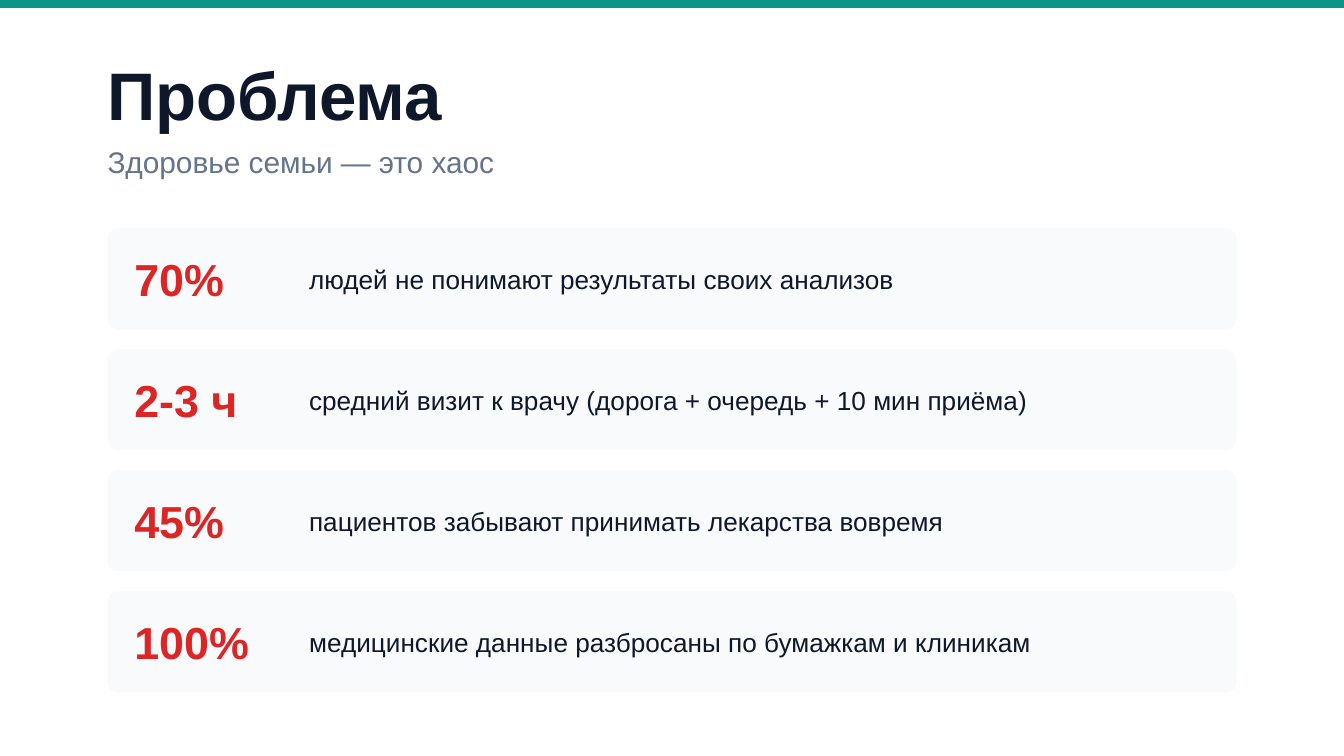
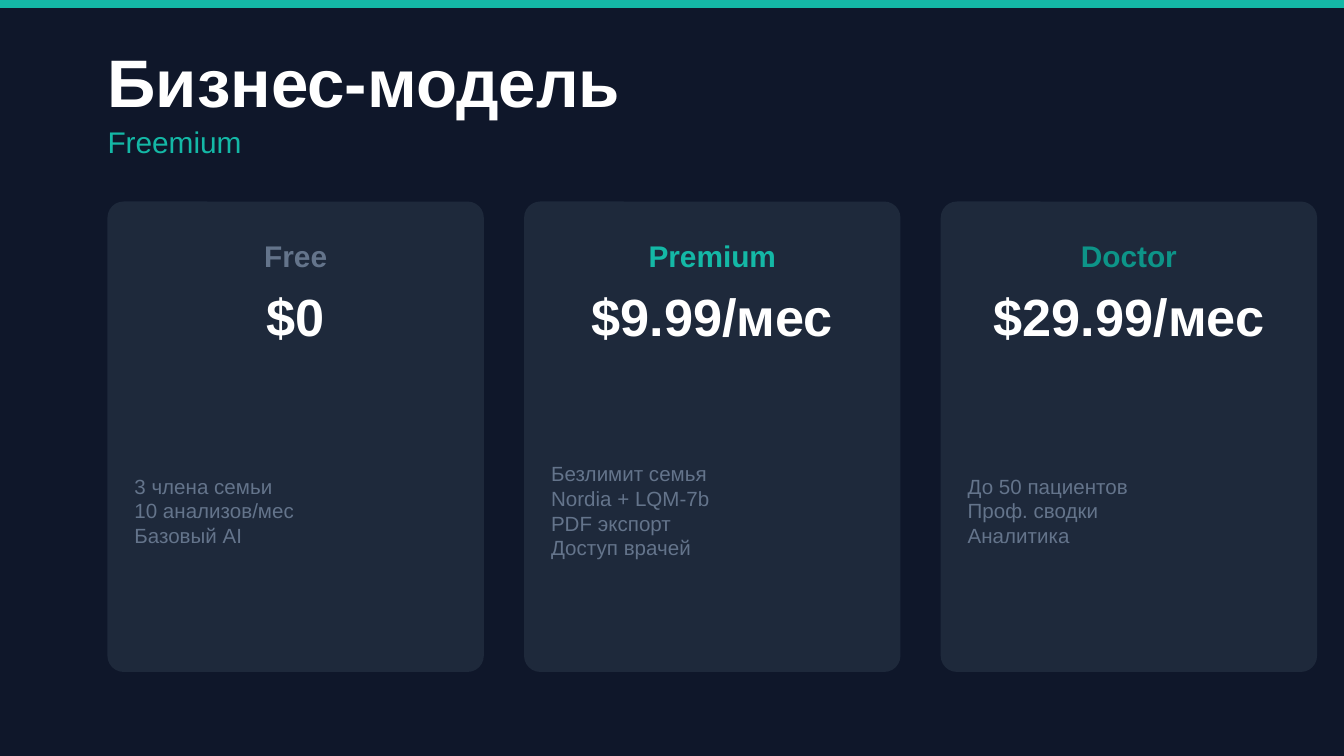
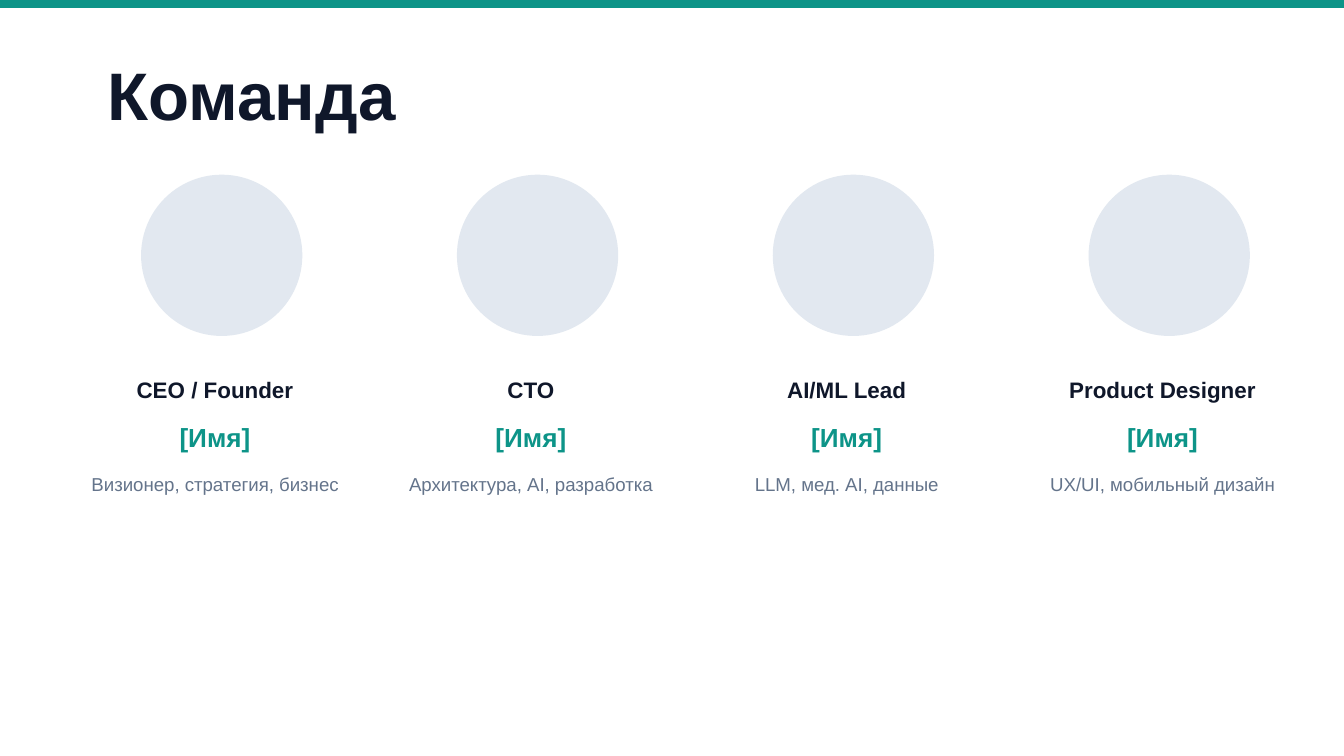
"""Build the problem, business model and team slides of a family health pitch."""
from dataclasses import dataclass
from typing import NamedTuple

import lxml.etree
import pptx
import pptx.dml.color
import pptx.enum.shapes
import pptx.enum.text
import pptx.oxml.ns
import pptx.presentation
import pptx.shapes.autoshape
import pptx.slide
import pptx.util

Inches = pptx.util.Inches
ShapeKind = pptx.enum.shapes.MSO_SHAPE
Align = pptx.enum.text.PP_ALIGN


@dataclass(frozen=True)
class Theme:
    font: str = "Arial"
    white: str = "FFFFFF"
    ink: str = "0F172A"
    muted: str = "64748B"
    teal: str = "0D9488"
    bright_teal: str = "14B8A6"
    red: str = "DC2626"
    row_fill: str = "F8FAFC"
    card_fill: str = "1E293B"
    avatar_fill: str = "E2E8F0"
    title_size: int = 36
    price_size: int = 28
    figure_size: int = 24
    heading_size: int = 16
    text_size: int = 14
    role_size: int = 12
    feature_size: int = 11
    skill_size: int = 10


THEME = Theme()
MARGIN = 0.8
SLIDE_WIDTH = 10
SLIDE_HEIGHT = SLIDE_WIDTH * 9 / 16


class Box(NamedTuple):
    left: float
    top: float
    width: float
    height: float


class Style(NamedTuple):
    size: int
    color: str
    bold: bool = False
    align: Align = Align.LEFT


class Look(NamedTuple):
    background: str
    band: str
    title: str
    subtitle: str


class Statistic(NamedTuple):
    figure: str
    meaning: str


class Plan(NamedTuple):
    name: str
    color: str
    price: str
    features: list[str]


class Member(NamedTuple):
    role: str
    skills: str


LIGHT = Look(THEME.white, THEME.teal, THEME.ink, THEME.muted)
DARK = Look(THEME.ink, THEME.bright_teal, THEME.white, THEME.bright_teal)

STATISTICS = [
    Statistic("70%", "людей не понимают результаты своих анализов"),
    Statistic("2-3 ч", "средний визит к врачу (дорога + очередь + 10 мин приёма)"),
    Statistic("45%", "пациентов забывают принимать лекарства вовремя"),
    Statistic("100%", "медицинские данные разбросаны по бумажкам и клиникам"),
]
PLANS = [
    Plan("Free", THEME.muted, "$0",
         ["3 члена семьи", "10 анализов/мес", "Базовый AI"]),
    Plan("Premium", THEME.bright_teal, "$9.99/мес",
         ["Безлимит семья", "Nordia + LQM-7b", "PDF экспорт", "Доступ врачей"]),
    Plan("Doctor", THEME.teal, "$29.99/мес",
         ["До 50 пациентов", "Проф. сводки", "Аналитика"]),
]
MEMBERS = [
    Member("CEO / Founder", "Визионер, стратегия, бизнес"),
    Member("CTO", "Архитектура, AI, разработка"),
    Member("AI/ML Lead", "LLM, мед. AI, данные"),
    Member("Product Designer", "UX/UI, мобильный дизайн"),
]


def rgb(color: str) -> pptx.dml.color.RGBColor:
    """Turn a hex string into a colour."""
    return pptx.dml.color.RGBColor.from_string(color)


def fill_text(shape: pptx.shapes.autoshape.Shape, box: Box,
              lines: list[str], style: Style) -> None:
    """Place a text shape and write one paragraph per line."""
    shape.left, shape.top, shape.width, shape.height = map(Inches, box)
    frame = shape.text_frame
    frame.word_wrap = True
    frame.auto_size = pptx.enum.text.MSO_AUTO_SIZE.NONE
    frame.vertical_anchor = pptx.enum.text.MSO_ANCHOR.MIDDLE
    frame.margin_left = frame.margin_top = frame.margin_right = frame.margin_bottom = 0
    for index, line in enumerate(lines):
        paragraph = frame.add_paragraph() if index else frame.paragraphs[0]
        paragraph.alignment = style.align
        if shape.is_placeholder:
            paragraph.space_before = pptx.util.Pt(0)
            properties = paragraph._p.get_or_add_pPr()
            properties.set("marL", "0")
            properties.set("indent", "0")
            lxml.etree.SubElement(properties, pptx.oxml.ns.qn("a:buNone"))
        run = paragraph.add_run()
        run.text = line
        run.font.name = THEME.font
        run.font.size = pptx.util.Pt(style.size)
        run.font.bold = style.bold
        run.font.color.rgb = rgb(style.color)


def add_text(slide: pptx.slide.Slide, box: Box, text: str, style: Style) -> None:
    """Add a one-line text box."""
    fill_text(slide.shapes.add_textbox(*map(Inches, box)), box, [text], style)


def add_panel(slide: pptx.slide.Slide, kind: ShapeKind, box: Box,
              color: str, radius: float = 0) -> None:
    """Add a plain filled shape behind the text of the slide."""
    panel = slide.shapes.add_shape(kind, *map(Inches, box))
    panel.shadow.inherit = False
    panel.fill.solid()
    panel.fill.fore_color.rgb = rgb(color)
    panel.line.fill.background()
    if radius:
        panel.adjustments[0] = radius / min(box.width, box.height)
    panel.element.getparent().insert(2, panel.element)


def add_slide(presentation: pptx.presentation.Presentation, layout: str, look: Look,
              title: str, top: float) -> pptx.slide.Slide:
    """Add a slide with its background, top band and title."""
    slide = presentation.slides.add_slide(presentation.slide_layouts.get_by_name(layout))
    slide.background.fill.solid()
    slide.background.fill.fore_color.rgb = rgb(look.background)
    add_panel(slide, ShapeKind.RECTANGLE, Box(0, 0, SLIDE_WIDTH, 0.06), look.band)
    fill_text(slide.shapes.title, Box(MARGIN, top, 8, 0.6), [title],
              Style(THEME.title_size, look.title, True))
    return slide


def add_subtitle(slide: pptx.slide.Slide, look: Look, text: str, top: float) -> None:
    """Write the subtitle in the first body placeholder."""
    fill_text(slide.placeholders[1], Box(MARGIN, top, 8, 0.4), [text],
              Style(THEME.heading_size, look.subtitle))


def build_problem(presentation: pptx.presentation.Presentation) -> None:
    """Build the slide of statistic rows."""
    slide = add_slide(presentation, "Title and Content", LIGHT, "Проблема", 0.4)
    add_subtitle(slide, LIGHT, "Здоровье семьи — это хаос", 1)
    height = 0.75
    for index, statistic in enumerate(STATISTICS):
        top = 1.7 + index * 0.9
        add_panel(slide, ShapeKind.ROUNDED_RECTANGLE, Box(MARGIN, top, 8.4, height),
                  THEME.row_fill, 0.08)
        add_text(slide, Box(1, top, 1.2, height), statistic.figure,
                 Style(THEME.figure_size, THEME.red, True))
        add_text(slide, Box(2.3, top, 6.7, height), statistic.meaning,
                 Style(THEME.text_size, THEME.ink))


def build_business_model(presentation: pptx.presentation.Presentation) -> None:
    """Build the slide of price plan cards."""
    slide = add_slide(presentation, "Comparison", DARK, "Бизнес-модель", 0.3)
    add_subtitle(slide, DARK, "Freemium", 0.85)
    width = 2.8
    for index, plan in enumerate(PLANS):
        left = MARGIN + index * 3.1
        add_panel(slide, ShapeKind.ROUNDED_RECTANGLE, Box(left, 1.5, width, 3.5),
                  THEME.card_fill, 0.12)
        add_text(slide, Box(left, 1.7, width, 0.4), plan.name,
                 Style(THEME.heading_size, plan.color, True, Align.CENTER))
        add_text(slide, Box(left, 2.1, width, 0.5), plan.price,
                 Style(THEME.price_size, THEME.white, True, Align.CENTER))
        fill_text(slide.placeholders[index + 2], Box(left + 0.2, 2.8, width - 0.4, 2),
                  plan.features, Style(THEME.feature_size, THEME.muted))


def build_team(presentation: pptx.presentation.Presentation) -> None:
    """Build the slide of team members."""
    slide = add_slide(presentation, "Title Only", LIGHT, "Команда", 0.4)
    width = 2.2
    for index, member in enumerate(MEMBERS):
        left = 0.5 + index * 2.35
        add_panel(slide, ShapeKind.OVAL, Box(left + 0.55, 1.3, 1.2, 1.2), THEME.avatar_fill)
        add_text(slide, Box(left, 2.7, width, 0.4), member.role,
                 Style(THEME.role_size, THEME.ink, True, Align.CENTER))
        add_text(slide, Box(left, 3.1, width, 0.3), "[Имя]",
                 Style(THEME.text_size, THEME.teal, True, Align.CENTER))
        add_text(slide, Box(left, 3.4, width, 0.4), member.skills,
                 Style(THEME.skill_size, THEME.muted, align=Align.CENTER))


def main() -> None:
    """Build and save the presentation."""
    presentation = pptx.Presentation()
    presentation.slide_width = Inches(SLIDE_WIDTH)
    presentation.slide_height = Inches(SLIDE_HEIGHT)
    build_problem(presentation)
    build_business_model(presentation)
    build_team(presentation)
    presentation.save("out.pptx")


if __name__ == "__main__":
    main()
